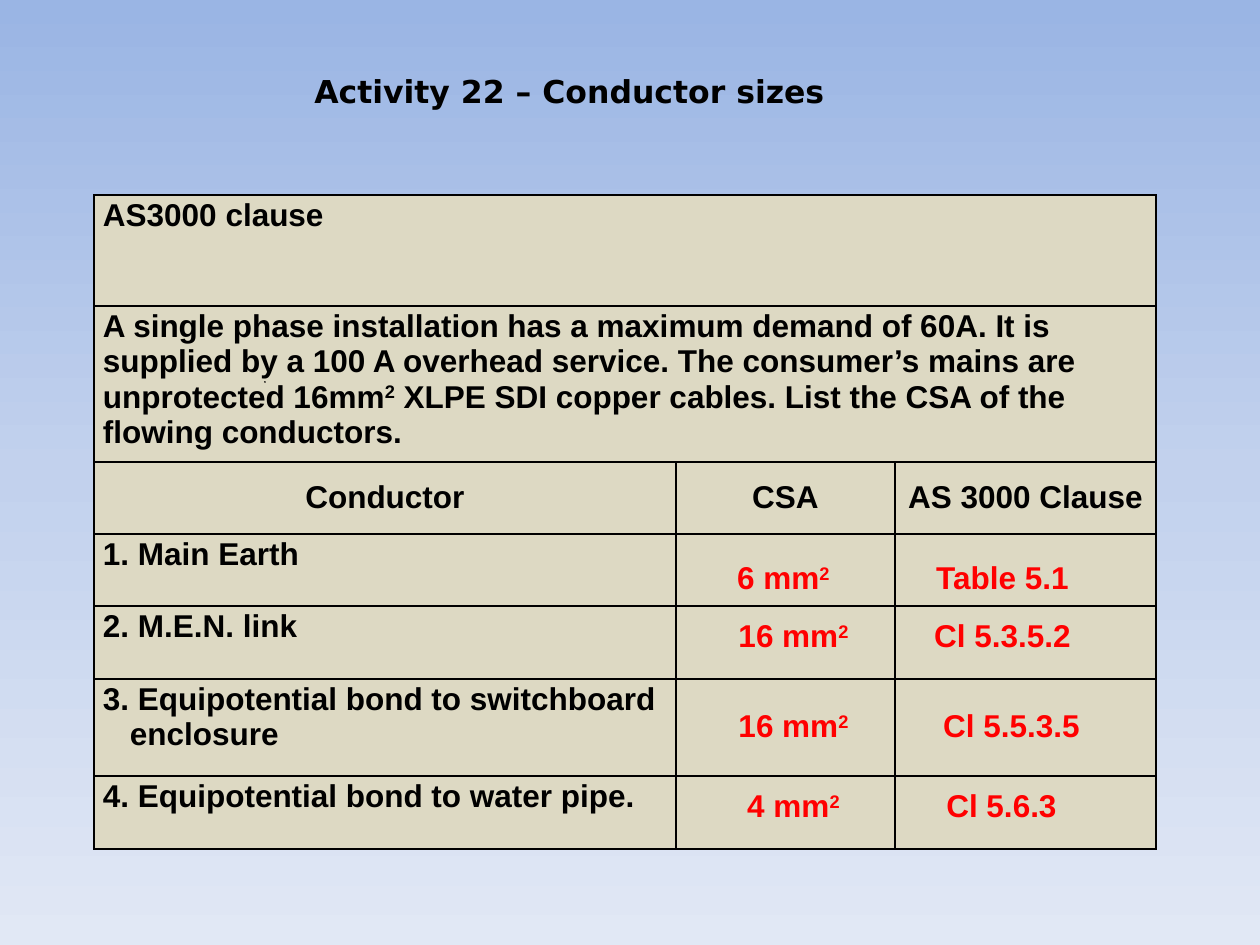
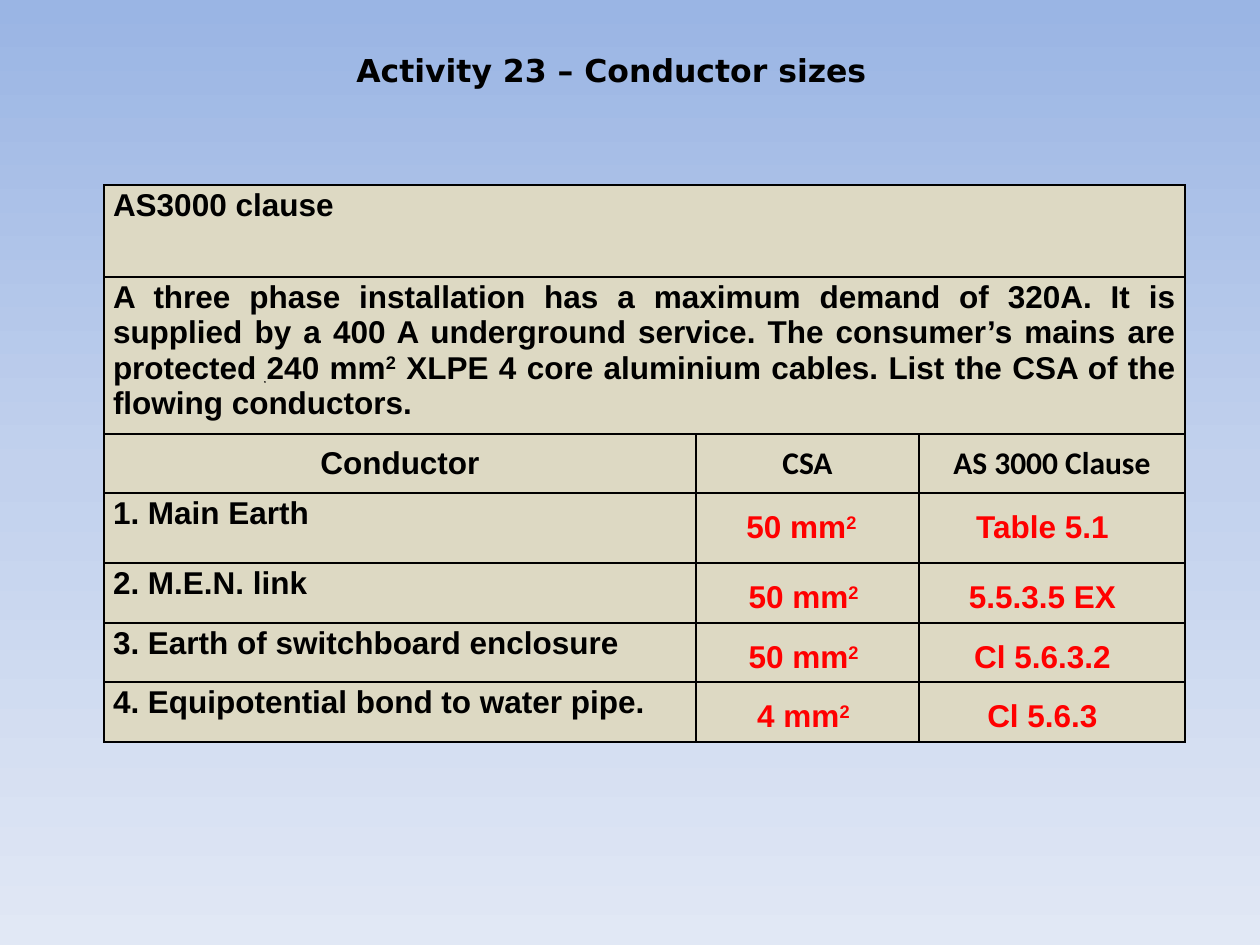
from copy import deepcopy
from dataclasses import dataclass

from lxml import etree
from pptx import Presentation
from pptx.dml.color import RGBColor as Rgb
from pptx.enum.shapes import MSO_SHAPE as Shape
from pptx.enum.text import MSO_ANCHOR as Anchor
from pptx.enum.text import PP_ALIGN as Align
from pptx.oxml.ns import qn
from pptx.util import Emu, Pt


@dataclass(frozen=True)
class Theme:
    ink: Rgb = Rgb.from_string("000000")
    answer: Rgb = Rgb.from_string("FF0000")
    cell: Rgb = Rgb.from_string("DDD9C3")
    dot: Rgb = Rgb.from_string("4F81BD")
    sky: tuple = ((0, "9AB5E4"), (0.5, "C2D1ED"), (1, "E1E8F5"))
    size: Pt = Pt(18)
    border: Pt = Pt(1)
    dot_line: Pt = Pt(0.75)
    title_font: str = "DejaVu Sans"
    body_font: str = "Arial"
    alternate_font: str = "Calibri"


THEME = Theme()
PX_PER_INCH = 126
HEADINGS = ("Conductor", "CSA", "AS 3000 Clause")

# Each answer row: top, (CSA, left), (clause, left)
ACTIVITIES = (
    dict(
        title="Activity 22 – Conductor sizes",
        title_at=(302, 66),
        table_at=(94, 195),
        columns=(582, 219, 261),
        rows=(111, 156, 72, 72, 73, 97, 73),
        question="A single phase installation has a maximum demand of 60A. It is "
                 "supplied by a 100 A overhead service. The consumer’s mains are "
                 "unprotected 16mm^2 XLPE SDI copper cables. List the CSA of the "
                 "flowing conductors.",
        question_align=Align.LEFT,
        heading_font=THEME.body_font,
        conductors=("1. Main Earth", "2. M.E.N. link",
                    "3. Equipotential bond to switchboard enclosure",
                    "4. Equipotential bond to water pipe."),
        answers=((552, ("6 mm^2", 689), ("Table 5.1", 908)),
                 (610, ("16 mm^2", 699), ("Cl 5.3.5.2", 908)),
                 (700, ("16 mm^2", 699), ("Cl 5.5.3.5", 917)),
                 (780, ("4 mm^2", 699), ("Cl 5.6.3", 907))),
    ),
    dict(
        title="Activity 23 – Conductor sizes",
        title_at=(344, 45),
        table_at=(104, 185),
        columns=(592, 223, 266),
        rows=(92, 156, 59, 70, 60, 59, 60),
        question="A three phase installation has a maximum demand of 320A. It is "
                 "supplied by a 400 A underground service. The consumer’s mains are "
                 "protected 240 mm^2 XLPE 4 core aluminium cables. List the CSA of "
                 "the flowing conductors.",
        question_align=Align.JUSTIFY,
        heading_font=THEME.alternate_font,
        conductors=("1. Main Earth", "2. M.E.N. link",
                    "3. Earth of switchboard enclosure",
                    "4. Equipotential bond to water pipe."),
        answers=((501, ("50 mm^2", 707), ("Table 5.1", 948)),
                 (571, ("50 mm^2", 709), ("5.5.3.5 EX", 948)),
                 (631, ("50 mm^2", 709), ("Cl 5.6.3.2", 948)),
                 (690, ("4 mm^2", 709), ("Cl 5.6.3", 948))),
    ),
)


def px(length):
    return Emu(round(length * 914400 / PX_PER_INCH))


def apply(target, **values):
    for name, value in values.items():
        setattr(target, name, value)


def write(frame, text, align=Align.LEFT, font=THEME.body_font, color=THEME.ink):
    """Fill the first paragraph; the character after ^ is raised."""
    para = frame.paragraphs[0]
    para.alignment = align
    before, _, after = text.partition("^")
    for part, raised in ((before, False), (after[:1], True), (after[1:], False)):
        if not part:
            continue
        span = para.add_run()
        span.text = part
        apply(span.font, name=font, size=THEME.size, bold=True)
        span.font.color.rgb = color
        if raised:
            span.font._element.set("baseline", "30000")
    return para


def add_text(page, text, left, top, width, wrap=True, **style):
    box = page.shapes.add_textbox(px(left), px(top), px(width), px(50))
    box.text_frame.word_wrap = wrap
    write(box.text_frame, text, **style)


def add_dot(page):
    dot = page.shapes.add_shape(Shape.RECTANGLE, px(265), px(382), 0, 0)
    dot.shadow.inherit = False
    dot.fill.solid()
    dot.fill.fore_color.rgb = THEME.dot
    dot.line.color.rgb = THEME.ink
    dot.line.width = THEME.dot_line


def format_cell(cell):
    apply(cell, margin_left=px(9), margin_right=px(9),
          margin_top=px(3), margin_bottom=px(3))
    properties = cell._tc.get_or_add_tcPr()
    for side in ("lnL", "lnR", "lnT", "lnB"):
        line = etree.SubElement(properties, qn(f"a:{side}"), w=str(THEME.border))
        fill = etree.SubElement(line, qn("a:solidFill"))
        etree.SubElement(fill, qn("a:srgbClr"), val=str(THEME.ink))
    cell.fill.solid()
    cell.fill.fore_color.rgb = THEME.cell


def add_conductor_table(page, activity):
    columns, rows = activity["columns"], activity["rows"]
    left, top = activity["table_at"]
    table = page.shapes.add_table(len(rows), len(columns), px(left), px(top),
                                  px(sum(columns)), px(sum(rows))).table
    apply(table, first_row=False, horz_banding=False)
    for column, width in zip(table.columns, columns):
        column.width = px(width)
    for row, height in zip(table.rows, rows):
        row.height = px(height)
    for cell in table.iter_cells():
        format_cell(cell)
    for index in (0, 1):
        table.cell(index, 0).merge(table.cell(index, len(columns) - 1))

    write(table.cell(0, 0).text_frame, "AS3000 clause")
    write(table.cell(1, 0).text_frame, activity["question"], activity["question_align"])
    for index, heading in enumerate(HEADINGS):
        cell = table.cell(2, index)
        cell.vertical_anchor = Anchor.MIDDLE
        font = activity["heading_font"] if index else THEME.body_font
        write(cell.text_frame, heading, Align.CENTER, font)
    for index, conductor in enumerate(activity["conductors"], start=3):
        para = write(table.cell(index, 0).text_frame, conductor)
        hanging = px(27)
        apply_indent = para._p.get_or_add_pPr().set
        apply_indent("marL", str(hanging))
        apply_indent("indent", str(-hanging))


def add_answers(page, answers):
    for top, *entries in answers:
        for text, left in entries:
            add_text(page, text, left, top, 189, align=Align.CENTER, color=THEME.answer)


def paint_background(master):
    fill = master.background.fill
    fill.gradient()
    fill.gradient_angle = 270
    stop_list = master.element.find(".//" + qn("a:gsLst"))
    while len(stop_list) < len(THEME.sky):
        stop_list.append(deepcopy(stop_list[-1]))
    for stop, (position, color) in zip(fill.gradient_stops, THEME.sky):
        stop.position = position
        stop.color.rgb = Rgb.from_string(color)


def main():
    deck = Presentation()
    apply(deck, slide_width=px(1260), slide_height=px(945))
    paint_background(deck.slide_master)
    for activity in ACTIVITIES:
        page = deck.slides.add_slide(deck.slide_layouts[6])
        add_conductor_table(page, activity)
        add_dot(page)
        add_text(page, activity["title"], *activity["title_at"], 544,
                 wrap=False, font=THEME.title_font)
        add_answers(page, activity["answers"])
    deck.save("out.pptx")


if __name__ == "__main__":
    main()
